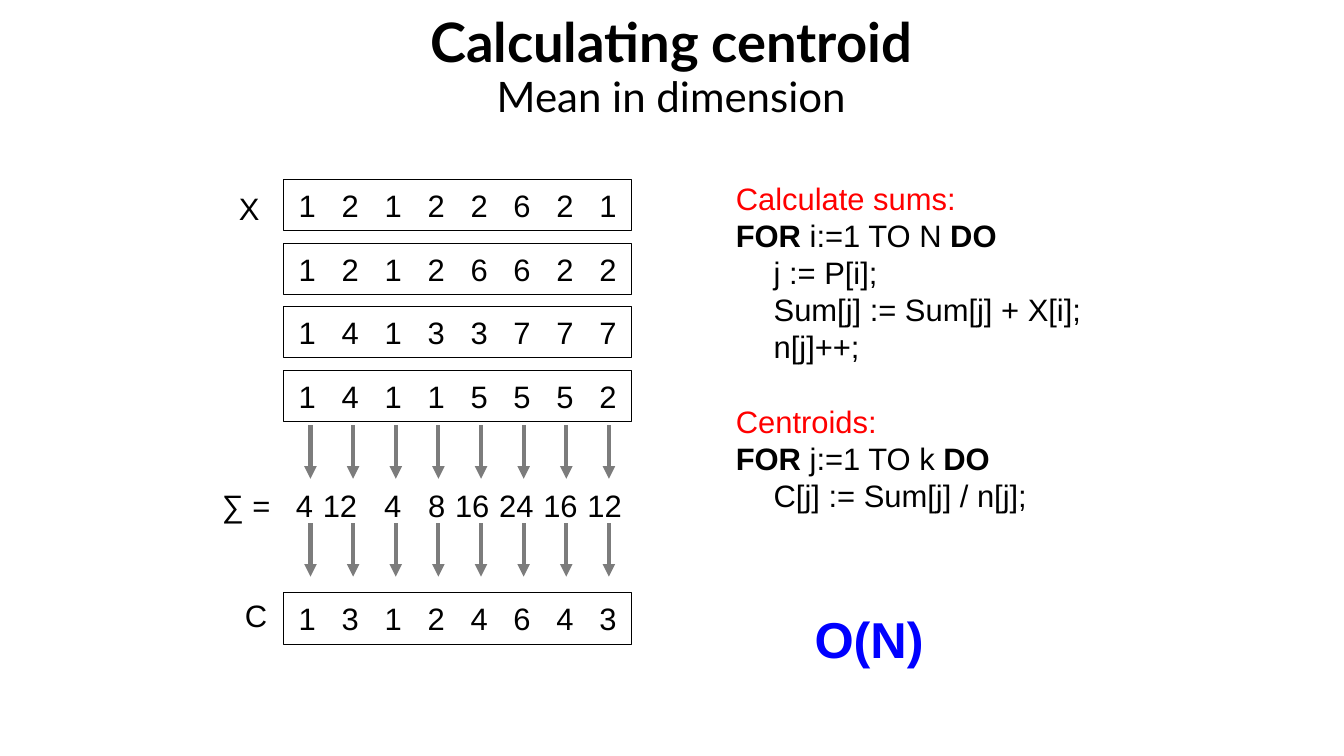
from lxml import etree
from pptx import Presentation
from pptx.dml.color import RGBColor
from pptx.enum.shapes import MSO_CONNECTOR, MSO_SHAPE
from pptx.enum.text import MSO_ANCHOR, MSO_AUTO_SIZE, PP_ALIGN
from pptx.oxml.ns import qn
from pptx.util import Pt

STRAIGHT = MSO_CONNECTOR.STRAIGHT
RECTANGLE = MSO_SHAPE.RECTANGLE
TOP, MIDDLE = MSO_ANCHOR.TOP, MSO_ANCHOR.MIDDLE
LEFT, CENTER = PP_ALIGN.LEFT, PP_ALIGN.CENTER
NO_AUTOFIT = MSO_AUTO_SIZE.NONE

BLACK, RED, BLUE, GREY = "000000", "FF0000", "0000FF", "7C7C7C"
BODY_SIZE = 22.1
LINE_HEIGHT = 26.5
DIGIT_PITCH = 30.7

VECTORS = ["12122621", "12126622", "14133777", "14115552"]
SUMS = [4, 12, 4, 8, 16, 24, 16, 12]
CENTROID = "13124643"

HEADING, STATEMENT, LOOP = "heading", "statement", "loop"
CODE = [
    (HEADING, "Calculate sums:"),
    (LOOP, " i:=1 TO N "),
    (STATEMENT, "j := P[i];"),
    (STATEMENT, "Sum[j] := Sum[j] + X[i];"),
    (STATEMENT, "n[j]++;"),
    (HEADING, "Centroids:"),
    (LOOP, " j:=1 TO k "),
    (STATEMENT, "C[j] := Sum[j] / n[j];"),
]


def rgb(hex_color):
    return RGBColor.from_string(hex_color)


def place(shape, left, top, width, height):
    shape.left, shape.top = Pt(left), Pt(top)
    shape.width, shape.height = Pt(width), Pt(height)


def set_frame(frame, anchor=TOP, wrap=False, left_inset=0):
    frame.auto_size = NO_AUTOFIT
    frame.word_wrap = wrap
    frame.vertical_anchor = anchor
    frame.margin_left = Pt(left_inset)
    frame.margin_right = frame.margin_top = frame.margin_bottom = 0


def format_runs(para, size=BODY_SIZE, color=BLACK, bold=False, font="Arial"):
    for span in para.runs:
        span.font.name = font
        span.font.size = Pt(size)
        span.font.bold = bold
        span.font.color.rgb = rgb(color)


def add_tabs(para, positions, align):
    tabs = etree.SubElement(para._p.get_or_add_pPr(), qn("a:tabLst"))
    for position in positions:
        etree.SubElement(tabs, qn("a:tab"), pos=str(Pt(position)), algn=align)


def add_label(page, text, left, top, width, height, **style):
    box = page.shapes.add_textbox(Pt(left), Pt(top), Pt(width), Pt(height))
    set_frame(box.text_frame)
    box.text_frame.text = text
    para = box.text_frame.paragraphs[0]
    format_runs(para, **style)
    return para


def add_vector(page, digits, left, top, width=249, height=36.7):
    """Framed row of digits on evenly spaced tab stops."""
    box = page.shapes.add_shape(RECTANGLE, Pt(left), Pt(top), Pt(width), Pt(height))
    box.shadow.inherit = False
    box.fill.background()
    box.line.color.rgb = rgb(BLACK)
    box.line.width = Pt(0.75)
    set_frame(box.text_frame, MIDDLE, left_inset=11)
    box.text_frame.text = "\t".join(digits)
    para = box.text_frame.paragraphs[0]
    para.alignment = LEFT
    add_tabs(para, [DIGIT_PITCH * step for step in range(1, len(digits))], "l")
    format_runs(para)


def add_arrows(page, left, top, length=38.2, pitch=30.45):
    for column in range(len(SUMS)):
        x = Pt(left + column * pitch)
        arrow = page.shapes.add_connector(STRAIGHT, x, Pt(top), x, Pt(top + length))
        arrow.line.color.rgb = rgb(GREY)
        arrow.line.width = Pt(3)
        etree.SubElement(arrow.line._get_or_add_ln(), qn("a:tailEnd"), type="triangle")
        etree.SubElement(arrow._element.spPr, qn("a:effectLst"))


def add_sums(page, left, top, width, height):
    text = "\t".join(["∑ ="] + [str(total) for total in SUMS])
    para = add_label(page, text, left, top, width, height)
    add_tabs(para, [65.2 + 31.5 * column for column in range(len(SUMS))], "r")


def add_diagram(page, left, top):
    for row, digits in enumerate(VECTORS):
        add_vector(page, digits, left, top + row * 45.4)
    add_arrows(page, left + 19.5, top + 175.6)
    add_sums(page, left - 43.9, top + 219, 300, LINE_HEIGHT)
    add_arrows(page, left + 19.5, top + 245.5)
    add_vector(page, CENTROID, left, top + 295.2)
    add_label(page, "X", left - 31.7, top + 7.2, 15, LINE_HEIGHT)
    add_label(page, "C", left - 27.3, top + 298, 16, LINE_HEIGHT)


def fill_title(title, left, top, width, height):
    place(title, left, top, width, height)
    frame = title.text_frame
    set_frame(frame, MIDDLE, wrap=True)
    frame.text = "Calculating centroid\nMean in dimension"
    for para, size, bold in zip(frame.paragraphs, (38.8, 30), (True, False)):
        para.alignment = CENTER
        para.line_spacing = 0.93
        format_runs(para, size, bold=bold, font="Lato")


def fill_code(body, left, top, width, height):
    place(body, left, top, width, height)
    frame = body.text_frame
    set_frame(frame)
    for index, (kind, text) in enumerate(CODE):
        para = frame.add_paragraph() if index else frame.paragraphs[0]
        indent = 27 if kind == STATEMENT else 0
        properties = para._p.get_or_add_pPr()
        properties.set("marL", str(Pt(indent)))
        properties.set("indent", "0")
        etree.SubElement(properties, qn("a:buNone"))
        para.line_spacing = Pt(LINE_HEIGHT)
        para.space_before = Pt(LINE_HEIGHT if kind == HEADING and index else 0)
        if kind == LOOP:
            for part in ("FOR", text, "DO"):
                para.add_run().text = part
        else:
            para.text = text
        format_runs(para, color=RED if kind == HEADING else BLACK)
        if kind == LOOP:
            para.runs[0].font.bold = para.runs[2].font.bold = True


def main():
    deck = Presentation()
    deck.slide_width, deck.slide_height = Pt(960), Pt(540)
    page = deck.slides.add_slide(deck.slide_layouts[1])
    fill_title(page.shapes.title, 170.6, 9.4, 617.8, 77.8)
    fill_code(page.placeholders[1], 525.6, 128.2, 249, 241.2)
    add_diagram(page, 202.3, 128.2)
    add_label(page, "O(N)", 581.8, 434.2, 78.5, 44, size=36, color=BLUE, bold=True)
    deck.save("out.pptx")


if __name__ == "__main__":
    main()
